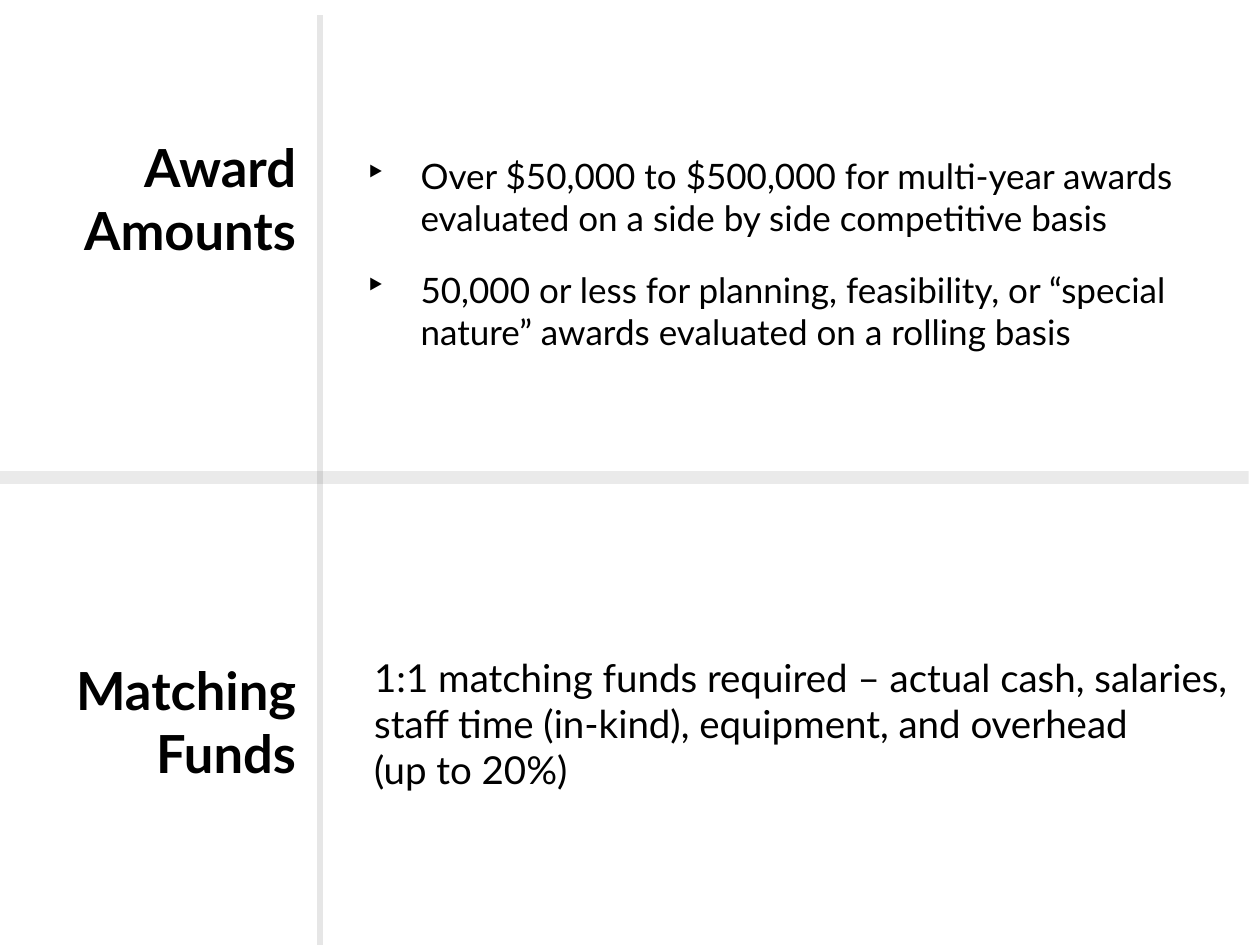
from lxml import etree
from pptx import Presentation
from pptx.dml.color import RGBColor
from pptx.enum.shapes import MSO_CONNECTOR as Line, MSO_SHAPE as Shape
from pptx.enum.text import MSO_ANCHOR as Anchor, PP_ALIGN as Align
from pptx.oxml.ns import qn
from pptx.util import Inches, Pt


def color(code):
    return RGBColor.from_string(code)


def add_text(box, text, size=20, bold=False, align=Align.LEFT,
             anchor=Anchor.MIDDLE, inset=0, bullet=None, gap=0):
    """Add a text box with one paragraph per line of text."""
    frame = slide.shapes.add_textbox(*map(Inches, box)).text_frame
    frame.word_wrap = True
    frame.vertical_anchor = anchor
    frame.margin_left = frame.margin_right = Inches(inset)
    frame.margin_top = frame.margin_bottom = Inches(inset / 2)
    for i, line in enumerate(text.split("\n")):
        para = frame.add_paragraph() if i else frame.paragraphs[0]
        para.text = line
        para.alignment = align
        if i:
            para.space_before = Pt(gap)
        if bullet:
            props = para._p.get_or_add_pPr()
            props.set("marL", str(Inches(0.68)))
            props.set("indent", str(Inches(-0.44)))
            etree.SubElement(props, qn("a:buChar")).set("char", bullet)
        for run in para.runs:
            font = run.font
            font.name, font.size, font.bold = "Lato", Pt(size), bold
            font.color.rgb = color("000000")


deck = Presentation()
deck.slide_width, deck.slide_height = Inches(10), Inches(7.5)
slide = deck.slides.add_slide(deck.slide_layouts[6])

# Headings on the left
for top, title in ((0.74, "Award Amounts"), (4.89, "Matching\nFunds")):
    add_text((0.2, top, 2.15, 1.67), title, size=30, bold=True,
             align=Align.RIGHT)

# Matching funds
add_text((2.97, 4.76, 7.03, 1.96),
         "1:1 matching funds required – actual cash, salaries, staff time "
         "(in-kind), equipment, and overhead\v(up to 20%)", size=22)

# Upright divider
rule = slide.shapes.add_connector(
    Line.STRAIGHT, Inches(2.54), Inches(0.12), Inches(2.54), Inches(7.5))
rule.line.color.rgb = color("E6E6E6")
rule.line.width = Pt(3)
etree.SubElement(rule._element.spPr, qn("a:effectLst"))

# Translucent bar between the two rows
bar = slide.shapes.add_shape(
    Shape.RECTANGLE, Inches(-0.09), Inches(3.74), Inches(10), Inches(0.1))
bar.shadow.inherit = False
bar.line.fill.background()
bar.fill.solid()
bar.fill.fore_color.rgb = color("343434")
tint = bar._element.spPr.find(qn("a:solidFill"))[0]
etree.SubElement(tint, qn("a:alpha")).set("val", "10000")

# Award amounts
add_text((2.56, 1.18, 7.46, 2.67),
         "Over $50,000 to $500,000 for multi-year awards evaluated on a "
         "side by side competitive basis\n"
         "50,000 or less for planning, feasibility, or “special nature” "
         "awards evaluated on a rolling basis",
         anchor=Anchor.TOP, inset=0.1, bullet="‣", gap=16.9)

deck.save("out.pptx")
